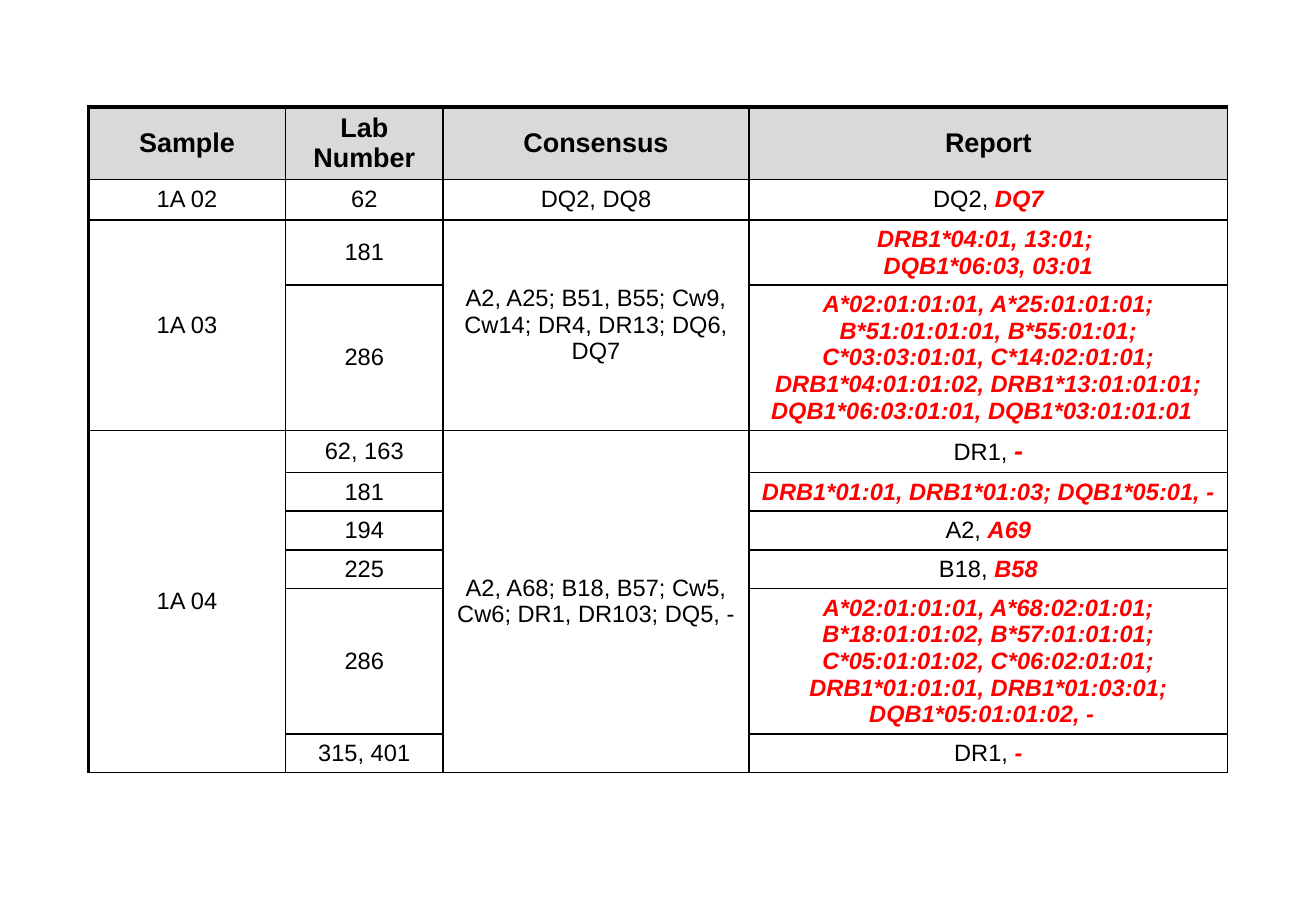
import dataclasses

import lxml.etree
import pptx
import pptx.dml.color
import pptx.enum.text
import pptx.oxml.ns
import pptx.table
import pptx.util

BLACK, RED, WHITE, GREY = "000000", "FF0000", "FFFFFF", "D9D9D9"
THIN, THICK = 1, 2.25
COLUMN_WIDTHS = (116.7, 93.5, 181.3, 283.8)
HEADER_HEIGHT = 42.7
HEADERS = ("Sample", "Lab Number", "Consensus", "Report")


@dataclasses.dataclass(frozen=True)
class Report:
    """One laboratory's report: agreeing text, then the incorrect lines."""
    lab: str
    height: float
    wrong: tuple[str, ...]
    right: str = ""
    wrong_size: float = 14


@dataclasses.dataclass(frozen=True)
class Sample:
    name: str
    consensus: str
    reports: tuple[Report, ...]


SAMPLES = (
    Sample("1A 02", "DQ2, DQ8", (Report("62", 24.1, ("DQ7",), "DQ2, "),)),
    Sample("1A 03", "A2, A25; B51, B55; Cw9, Cw14; DR4, DR13; DQ6, DQ7", (
        Report("181", 38.6, ("DRB1*04:01, 13:01; ", "DQB1*06:03, 03:01")),
        Report("286", 86, (
            "A*02:01:01:01, A*25:01:01:01; B*51:01:01:01, B*55:01:01; "
            "C*03:03:01:01, C*14:02:01:01;",
            "DRB1*04:01:01:02, DRB1*13:01:01:01; "
            "DQB1*06:03:01:01, DQB1*03:01:01:01  ")),
    )),
    Sample("1A 04", "A2, A68; B18, B57; Cw5, Cw6; DR1, DR103; DQ5, -", (
        Report("62, 163", 24.9, ("-",), "DR1, ", 16),
        Report("181", 23, ("DRB1*01:01, DRB1*01:03; DQB1*05:01, -",)),
        Report("194", 23, ("A69",), "A2, "),
        Report("225", 23, ("B58",), "B18, "),
        Report("286", 86, (
            "A*02:01:01:01, A*68:02:01:01; B*18:01:01:02, B*57:01:01:01; "
            "C*05:01:01:02, C*06:02:01:01;",
            "DRB1*01:01:01, DRB1*01:03:01; DQB1*05:01:01:02, -  ")),
        Report("315, 401", 23, ("-",), "DR1, "),
    )),
)


@dataclasses.dataclass(frozen=True)
class Run:
    text: str
    size: float = 14
    color: str = BLACK
    bold: bool = False
    italic: bool = False


def rgb(color: str) -> pptx.dml.color.RGBColor:
    return pptx.dml.color.RGBColor.from_string(color)


def write_cell(cell: pptx.table._Cell, lines: list[list[Run]]) -> None:
    cell.vertical_anchor = pptx.enum.text.MSO_ANCHOR.MIDDLE
    frame = cell.text_frame
    for index, line in enumerate(lines):
        paragraph = frame.add_paragraph() if index else frame.paragraphs[0]
        paragraph.alignment = pptx.enum.text.PP_ALIGN.CENTER
        for part in line:
            run = paragraph.add_run()
            run.text = part.text
            run.font.name = "Arial"
            run.font.size = pptx.util.Pt(part.size)
            run.font.bold = part.bold
            run.font.italic = part.italic
            run.font.color.rgb = rgb(part.color)


def style_cell(cell: pptx.table._Cell, fill: str, left: float, top: float) -> None:
    properties = cell._tc.get_or_add_tcPr()
    qn = pptx.oxml.ns.qn
    for side, width in (("L", left), ("R", THIN), ("T", top), ("B", THIN)):
        line = lxml.etree.SubElement(
            properties, qn(f"a:ln{side}"), w=str(pptx.util.Pt(width)))
        solid = lxml.etree.SubElement(line, qn("a:solidFill"))
        lxml.etree.SubElement(solid, qn("a:srgbClr"), val=BLACK)
    cell.fill.solid()
    cell.fill.fore_color.rgb = rgb(fill)


def report_lines(report: Report) -> list[list[Run]]:
    lines = [[Run(text, report.wrong_size, RED, True, True)]
             for text in report.wrong]
    if report.right:
        lines[0].insert(0, Run(report.right))
    return lines


def main() -> None:
    presentation = pptx.Presentation()
    presentation.slide_width = pptx.util.Pt(780)
    presentation.slide_height = pptx.util.Pt(540)
    slide = presentation.slides.add_slide(presentation.slide_layouts[6])

    # Table grid
    heights = [HEADER_HEIGHT] + [
        report.height for sample in SAMPLES for report in sample.reports]
    table = slide.shapes.add_table(
        len(heights), len(COLUMN_WIDTHS), pptx.util.Pt(52.5), pptx.util.Pt(63.5),
        pptx.util.Pt(sum(COLUMN_WIDTHS)), pptx.util.Pt(sum(heights))).table
    table.first_row = table.horz_banding = False
    for column, width in zip(table.columns, COLUMN_WIDTHS):
        column.width = pptx.util.Pt(width)
    for row, height in zip(table.rows, heights):
        row.height = pptx.util.Pt(height)

    # Fills and borders
    for row_index in range(len(heights)):
        for column_index in range(len(COLUMN_WIDTHS)):
            style_cell(table.cell(row_index, column_index),
                       WHITE if row_index else GREY,
                       THIN if column_index else THICK,
                       THIN if row_index else THICK)

    # Header
    for column_index, header in enumerate(HEADERS):
        write_cell(table.cell(0, column_index), [[Run(header, 16, bold=True)]])

    # Samples and their reports
    first = 1
    for sample in SAMPLES:
        last = first + len(sample.reports) - 1
        for column_index, text in ((0, sample.name), (2, sample.consensus)):
            cell = table.cell(first, column_index)
            if last > first:
                cell.merge(table.cell(last, column_index))
            write_cell(cell, [[Run(text)]])
        for row_index, report in enumerate(sample.reports, first):
            write_cell(table.cell(row_index, 1), [[Run(report.lab)]])
            write_cell(table.cell(row_index, 3), report_lines(report))
        first = last + 1

    presentation.save("out.pptx")


if __name__ == "__main__":
    main()
